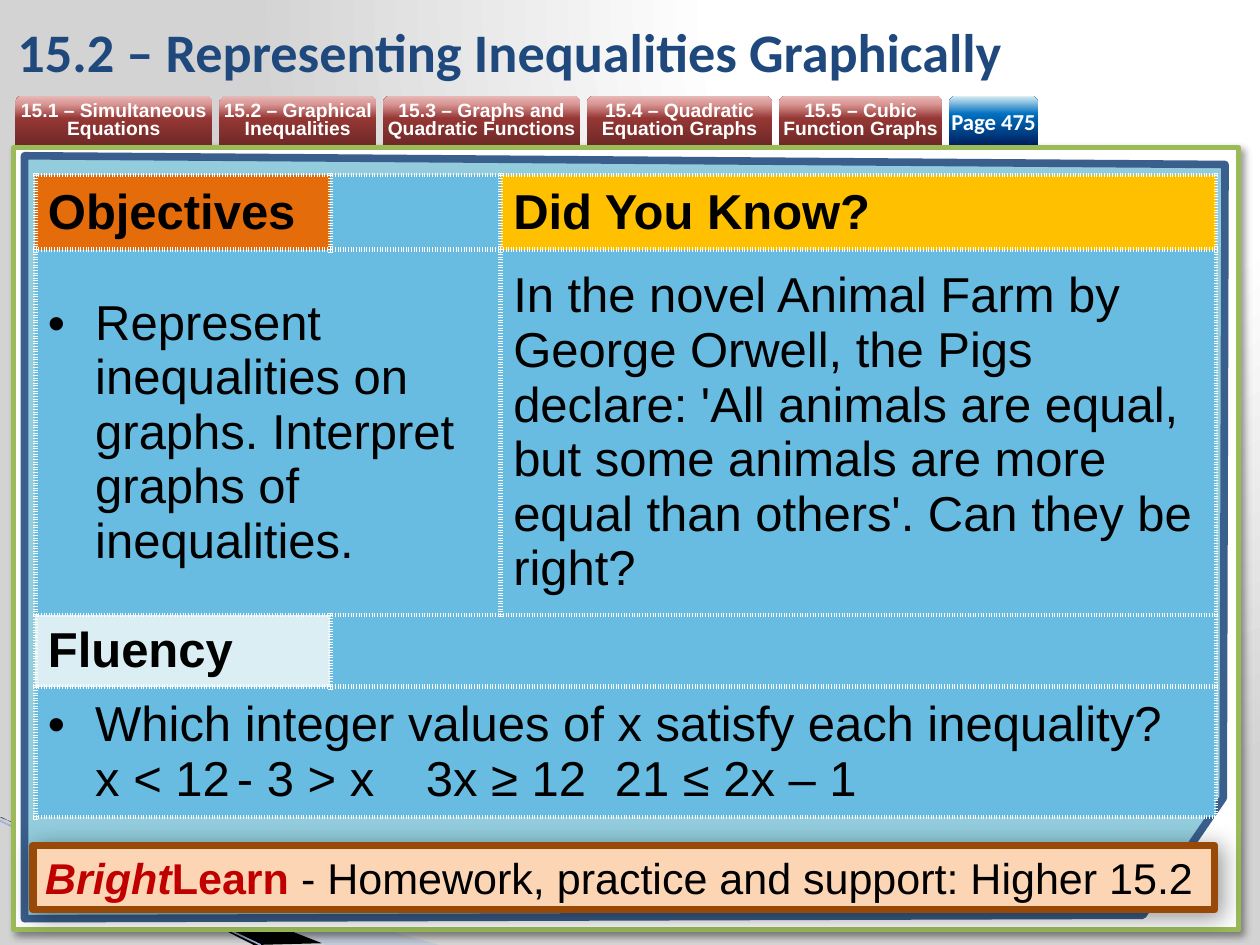
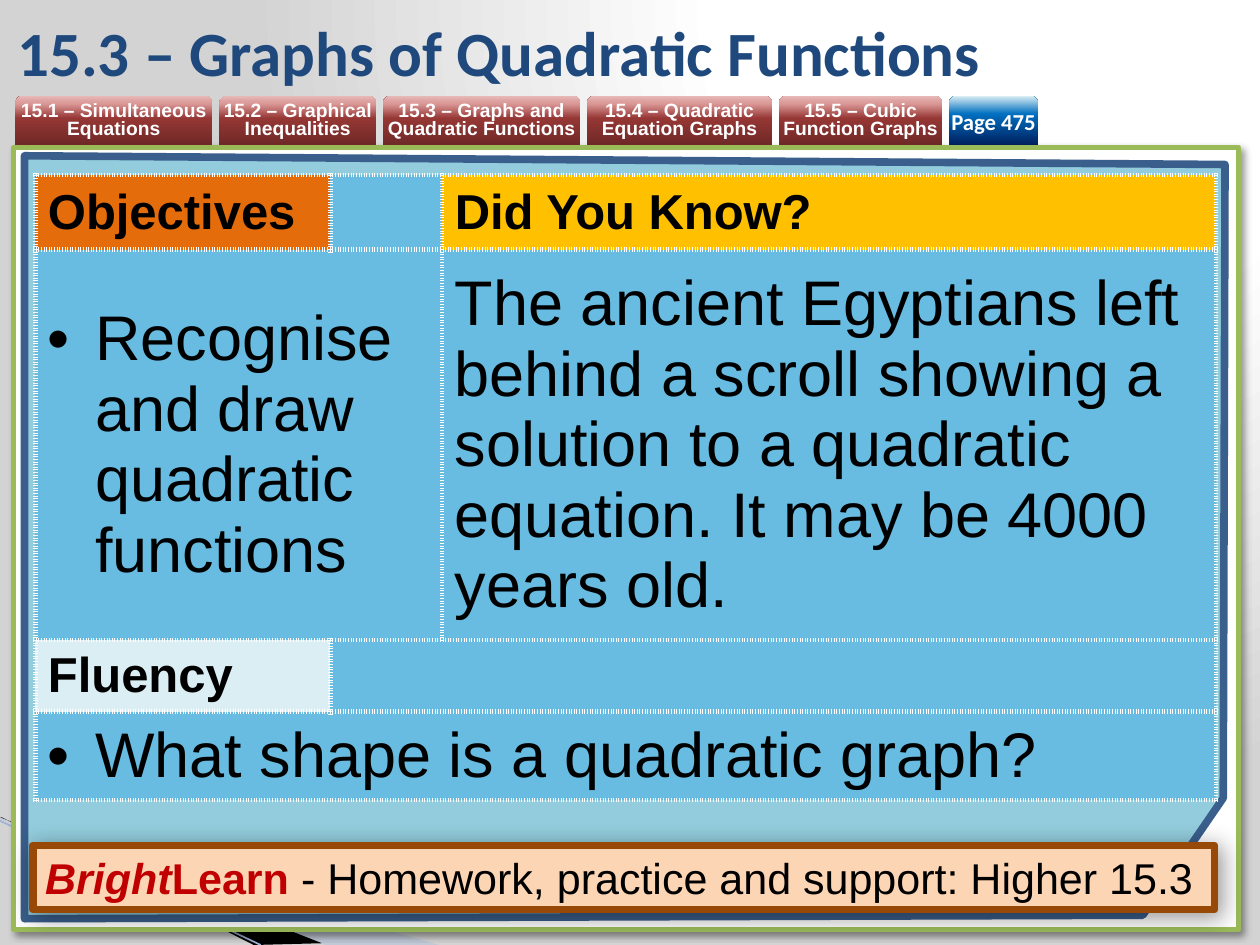
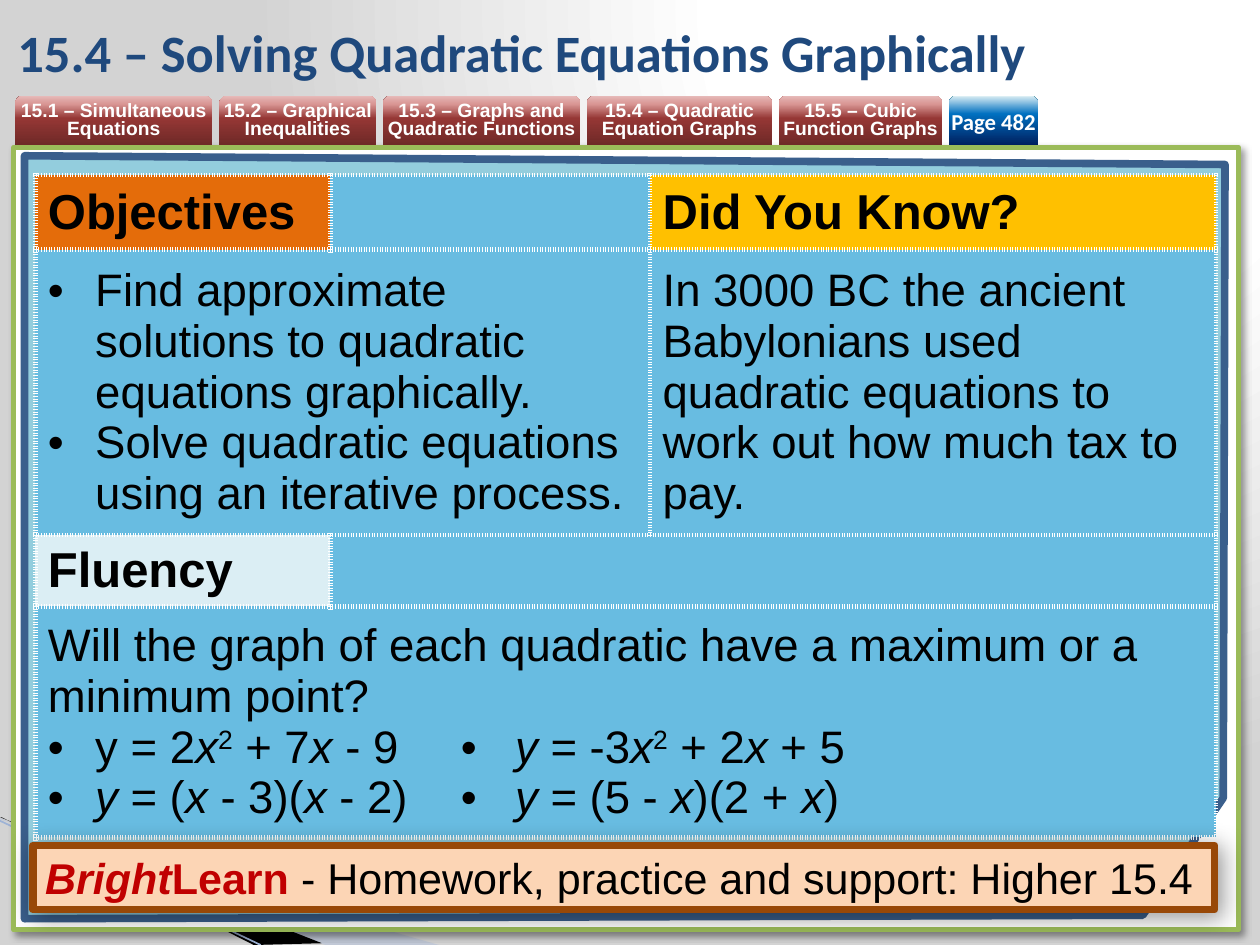
from dataclasses import dataclass

from lxml import etree
from pptx import Presentation
from pptx.dml.color import RGBColor
from pptx.enum.shapes import MSO_CONNECTOR, MSO_SHAPE
from pptx.enum.text import MSO_ANCHOR, PP_ALIGN
from pptx.oxml import parse_xml
from pptx.oxml.ns import nsdecls, qn
from pptx.util import Pt

RECT = MSO_SHAPE.RECTANGLE
TAB = MSO_SHAPE.ROUND_2_SAME_RECTANGLE
STRAIGHT = MSO_CONNECTOR.STRAIGHT
MIDDLE = MSO_ANCHOR.MIDDLE
LEFT, CENTER = PP_ALIGN.LEFT, PP_ALIGN.CENTER

# Colours shared by the slides
BLACK, WHITE = "000000", "FFFFFF"
NAVY, RED = "1F497D", "C00000"
ORANGE, YELLOW, PALE, SKY = "E46C0A", "FFC000", "DBEEF4", "68BCE1"
MAROON_STOPS = [(0, "6F2927"), (54, "953735"), (83, "D99694"), (100, "E6B9B8")]
BLUE_STOPS = [(0, "002060"), (63, "0070C0"), (100, "DBEEF4")]
BACKGROUND_STOPS = [(0, WHITE), (40, WHITE), (100, "D3D3D3")]
UPWARD = '<a:lin ang="16200000" scaled="0"/>'
FROM_TOP_RIGHT = ('<a:path path="circle"><a:fillToRect l="65000" t="0" '
                  'r="0" b="98000"/></a:path>')

# Section tabs: wording and width
TABS = [
    ("15.1 – Simultaneous Equations", 113),
    ("15.2 – Graphical Inequalities", 90),
    ("15.3 – Graphs and Quadratic Functions", 113),
    ("15.4 – Quadratic Equation Graphs", 106),
    ("15.5 – Cubic Function Graphs", 93.6),
]
TAB_LEFT, TAB_TOP, TAB_HEIGHT, TAB_GAP = 8.6, 54.7, 28.1, 3.6
PAGE_WIDTH = 51

# Lesson table
TABLE_LEFT, TABLE_TOP, TABLE_WIDTH = 20.2, 100.1, 674.6
HEADING_WIDTH = 168.5
ROW_HEIGHTS = [42.5, 155.5, 35.3, 45.4]
HEADING_SIZE = 28
INDENT = 27

ITALIC = {"italic": True}
X, Y = ("x", ITALIC), ("y", ITALIC)
SQUARED = ("2", {"raised": 30})


@dataclass
class Para:
    """A paragraph: runs are strings or (string, format) pairs."""
    runs: list
    bullet: bool = False
    first: float = 0
    tabs: tuple = ()


@dataclass
class Lesson:
    number: str
    title: str
    title_size: float
    page: str
    objectives_width: float
    size: float
    objectives: list
    fact: str
    fluency: list


LESSONS = [
    Lesson(
        "15.2", "Representing Inequalities Graphically", 31, "Page 475", 265.9, 28,
        [Para(["Represent inequalities on graphs. Interpret graphs of inequalities."],
              bullet=True)],
        "In the novel Animal Farm by George Orwell, the Pigs declare: 'All animals "
        "are equal, but some animals are more equal than others'. Can they be right?",
        [Para(["Which integer values of x satisfy each inequality?"], bullet=True),
         Para(["x < 12\t- 3 > x\t3x ≥ 12\t21 ≤ 2x – 1"],
              first=INDENT, tabs=(158, 299, 452.5))]),
    Lesson(
        "15.3", "Graphs of Quadratic Functions", 36, "Page 475", 232.5, 36,
        [Para(["Recognise and draw quadratic functions"], bullet=True)],
        "The ancient Egyptians left behind a scroll showing a solution to a "
        "quadratic equation. It may be 4000 years old.",
        [Para(["What shape is a quadratic graph?"], bullet=True)]),
    Lesson(
        "15.4", "Solving Quadratic Equations Graphically", 30, "Page 482", 351.3, 26,
        [Para(["Find approximate solutions to quadratic equations graphically."],
              bullet=True),
         Para(["Solve quadratic equations using an iterative process."], bullet=True)],
        "In 3000 BC the ancient Babylonians used quadratic equations to work out "
        "how much tax to pay.",
        [Para(["Will the graph of each quadratic have a maximum or a minimum point?"]),
         Para(["y = 2", X, SQUARED, " + 7", X, " - 9\t•\t",
               Y, " = -3", X, SQUARED, " + 2", X, " + 5"],
              bullet=True, tabs=(236, 267)),
         Para([Y, " = (", X, " - 3)(", X, " - 2)\t•\t",
               Y, " = (5 - ", X, ")(2 + ", X, ")"],
              bullet=True, tabs=(236, 267))]),
]


def rgb(hex_colour):
    return RGBColor.from_string(hex_colour)


# Fills, lines and effects
def set_gradient(owner, fill, stops, direction):
    """Put a gradient of any number of stops in place of the owner's fill."""
    fill.solid()
    solid = next(owner.iter(qn("a:solidFill")))
    marks = "".join(f'<a:gs pos="{position * 1000}"><a:srgbClr val="{colour}"/></a:gs>'
                    for position, colour in stops)
    solid.getparent().replace(solid, parse_xml(
        f'<a:gradFill {nsdecls("a")} rotWithShape="1"><a:gsLst>{marks}</a:gsLst>'
        f'{direction}</a:gradFill>'))


def set_look(shape, fill=None, alpha=None, line=None, weight=1):
    shape.shadow.inherit = False
    if fill:
        shape.fill.solid()
        shape.fill.fore_color.rgb = rgb(fill)
    if alpha:
        colour = next(shape._element.spPr.iter(qn("a:srgbClr")))
        etree.SubElement(colour, qn("a:alpha"), val=str(alpha * 1000))
    if line:
        shape.line.color.rgb = rgb(line)
        shape.line.width = Pt(weight)
    else:
        shape.line.fill.background()


def cast_shadow(shape, blur, distance):
    effects = shape._element.spPr.find(qn("a:effectLst"))
    effects.append(parse_xml(
        f'<a:outerShdw {nsdecls("a")} blurRad="{Pt(blur)}" dist="{Pt(distance)}" '
        f'dir="2700000" algn="tl" rotWithShape="0"><a:srgbClr val="{BLACK}">'
        f'<a:alpha val="40000"/></a:srgbClr></a:outerShdw>'))


# Text
def set_indents(paragraph, para):
    properties = paragraph._p.get_or_add_pPr()
    properties.set("marL", str(Pt(INDENT if para.bullet else 0)))
    properties.set("indent", str(Pt(-INDENT if para.bullet else para.first)))
    if para.bullet:
        etree.SubElement(properties, qn("a:buFont"), typeface="Arial")
        etree.SubElement(properties, qn("a:buChar"), char="•")
    if para.tabs:
        stops = etree.SubElement(properties, qn("a:tabLst"))
        for stop in para.tabs:
            etree.SubElement(stops, qn("a:tab"), pos=str(Pt(stop)), algn="l")


def write(frame, text, *, size, font="Arial", colour=BLACK, bold=False,
          align=LEFT, leading=None):
    """Write a string or a list of Para into a text frame."""
    paras = [Para([text])] if isinstance(text, str) else text
    for index, para in enumerate(paras):
        paragraph = frame.add_paragraph() if index else frame.paragraphs[0]
        paragraph.alignment = align
        if leading:
            paragraph.line_spacing = Pt(leading)
        set_indents(paragraph, para)
        for part in para.runs:
            words, style = (part, {}) if isinstance(part, str) else part
            run = paragraph.add_run()
            run.text = words
            run.font.name = font
            run.font.size = Pt(size)
            run.font.bold = style.get("bold", bold)
            run.font.italic = style.get("italic", False)
            run.font.color.rgb = rgb(style.get("colour", colour))
            if "raised" in style:
                run.font._element.set("baseline", str(style["raised"] * 1000))


def prepare_frame(shape, margin=None):
    frame = shape.text_frame
    frame.word_wrap = True
    frame.vertical_anchor = MIDDLE
    if margin is not None:
        frame.margin_left = frame.margin_right = Pt(margin)
        frame.margin_top = frame.margin_bottom = Pt(margin)
    return frame


# Kinds of element
def add_box(slide, kind, left, top, width, height):
    return slide.shapes.add_shape(kind, Pt(left), Pt(top), Pt(width), Pt(height))


def add_outline(slide, points, **look):
    builder = slide.shapes.build_freeform(*points[0], scale=Pt(1))
    builder.add_line_segments(points[1:], close=True)
    set_look(builder.convert_to_shape(), **look)


def add_tab(slide, text, left, width, stops, **style):
    tab = add_box(slide, TAB, left, TAB_TOP, width, TAB_HEIGHT)
    set_look(tab)
    set_gradient(tab._element.spPr, tab.fill, stops, UPWARD)
    write(prepare_frame(tab, margin=0), text, colour=WHITE, bold=True,
          align=CENTER, **style)


def add_backdrop(slide):
    set_gradient(slide._element, slide.background.fill, BACKGROUND_STOPS,
                 FROM_TOP_RIGHT)
    # Corner stripes
    add_outline(slide, [(-0.7, 468), (251.3, 540), (186.5, 540), (-0.7, 467.3)],
                fill="A7B9DB", alpha=40)
    add_outline(slide, [(0, 466.6), (184.3, 539.3), (145.4, 540), (0.7, 467.3)],
                fill=BLACK)
    edge = slide.shapes.add_connector(STRAIGHT, Pt(0), Pt(469), Pt(149), Pt(540))
    edge.line.color.rgb = rgb("9EB3D6")
    edge.line.width = Pt(0.95)
    etree.SubElement(edge._element.spPr, qn("a:effectLst"))
    # Framed panel with a cut corner
    panel = add_box(slide, RECT, 7.9, 84.2, 699.8, 447.1)
    set_look(panel, fill=WHITE, line="9BBB59", weight=3)
    cast_shadow(panel, 4, 3)
    add_outline(slide, [(14.4, 89.3), (699.8, 93.6), (699.1, 455.8),
                        (653, 523.4), (14.4, 524.9)],
                fill="93CDDD", line="3A5F8C", weight=4.33)


def add_header(slide, lesson):
    title = slide.shapes.add_textbox(Pt(2.9), Pt(3.6), Pt(595.4), Pt(51.1))
    write(prepare_frame(title), f"{lesson.number} – {lesson.title}",
          size=lesson.title_size, font="Calibri", colour=NAVY, bold=True)
    left = TAB_LEFT
    for section, width in TABS:
        add_tab(slide, section, left, width, MAROON_STOPS, size=11, leading=10)
        left += width + TAB_GAP
    add_tab(slide, lesson.page, left, PAGE_WIDTH, BLUE_STOPS, size=13, font="Calibri")


def set_cell(cell, fill):
    cell.fill.solid()
    cell.fill.fore_color.rgb = rgb(fill)
    cell.vertical_anchor = MIDDLE
    for index, side in enumerate(("lnL", "lnR", "lnT", "lnB")):
        cell._tc.get_or_add_tcPr().insert(index, parse_xml(
            f'<a:{side} {nsdecls("a")} w="{Pt(3)}"><a:solidFill>'
            f'<a:srgbClr val="{WHITE}"/></a:solidFill>'
            f'<a:prstDash val="sysDot"/></a:{side}>'))


def add_lesson_table(slide, lesson):
    widths = [HEADING_WIDTH, lesson.objectives_width - HEADING_WIDTH,
              TABLE_WIDTH - lesson.objectives_width]
    table = slide.shapes.add_table(
        len(ROW_HEIGHTS), len(widths), Pt(TABLE_LEFT), Pt(TABLE_TOP),
        Pt(TABLE_WIDTH), Pt(sum(ROW_HEIGHTS))).table
    table.first_row = table.horz_banding = False
    for column, width in zip(table.columns, widths):
        column.width = Pt(width)
    for row, height in zip(table.rows, ROW_HEIGHTS):
        row.height = Pt(height)

    headings = {(0, 0): ("Objectives", ORANGE), (0, 2): ("Did You Know?", YELLOW),
                (2, 0): ("Fluency", PALE)}
    bodies = {(1, 0): lesson.objectives, (1, 2): lesson.fact, (3, 0): lesson.fluency}
    for row in range(len(ROW_HEIGHTS)):
        for column in range(len(widths)):
            place = row, column
            cell = table.cell(row, column)
            heading, fill = headings.get(place, (None, SKY))
            set_cell(cell, fill)
            if heading:
                write(cell.text_frame, heading, size=HEADING_SIZE, bold=True)
            elif place in bodies:
                write(cell.text_frame, bodies[place], size=lesson.size)
    for start, end in (((1, 0), (1, 1)), ((2, 1), (2, 2)), ((3, 0), (3, 2))):
        table.cell(*start).merge(table.cell(*end))


def add_support_bar(slide, number):
    bar = add_box(slide, RECT, 18.7, 483.1, 675.4, 36.7)
    set_look(bar, fill="FCD5B5", line="984807", weight=4.33)
    cast_shadow(bar, 13, 3)
    brand = {"bold": True, "colour": RED}
    write(prepare_frame(bar),
          [Para([("Bright", {**brand, **ITALIC}), ("Learn ", brand),
                 f"- Homework, practice and support: Higher {number}"])],
          size=24.6)


def main():
    deck = Presentation()
    deck.slide_width, deck.slide_height = Pt(720), Pt(540)
    blank = deck.slide_layouts[6]
    for lesson in LESSONS:
        slide = deck.slides.add_slide(blank)
        add_backdrop(slide)
        add_header(slide, lesson)
        add_lesson_table(slide, lesson)
        add_support_bar(slide, lesson.number)
    deck.save("out.pptx")


if __name__ == "__main__":
    main()
